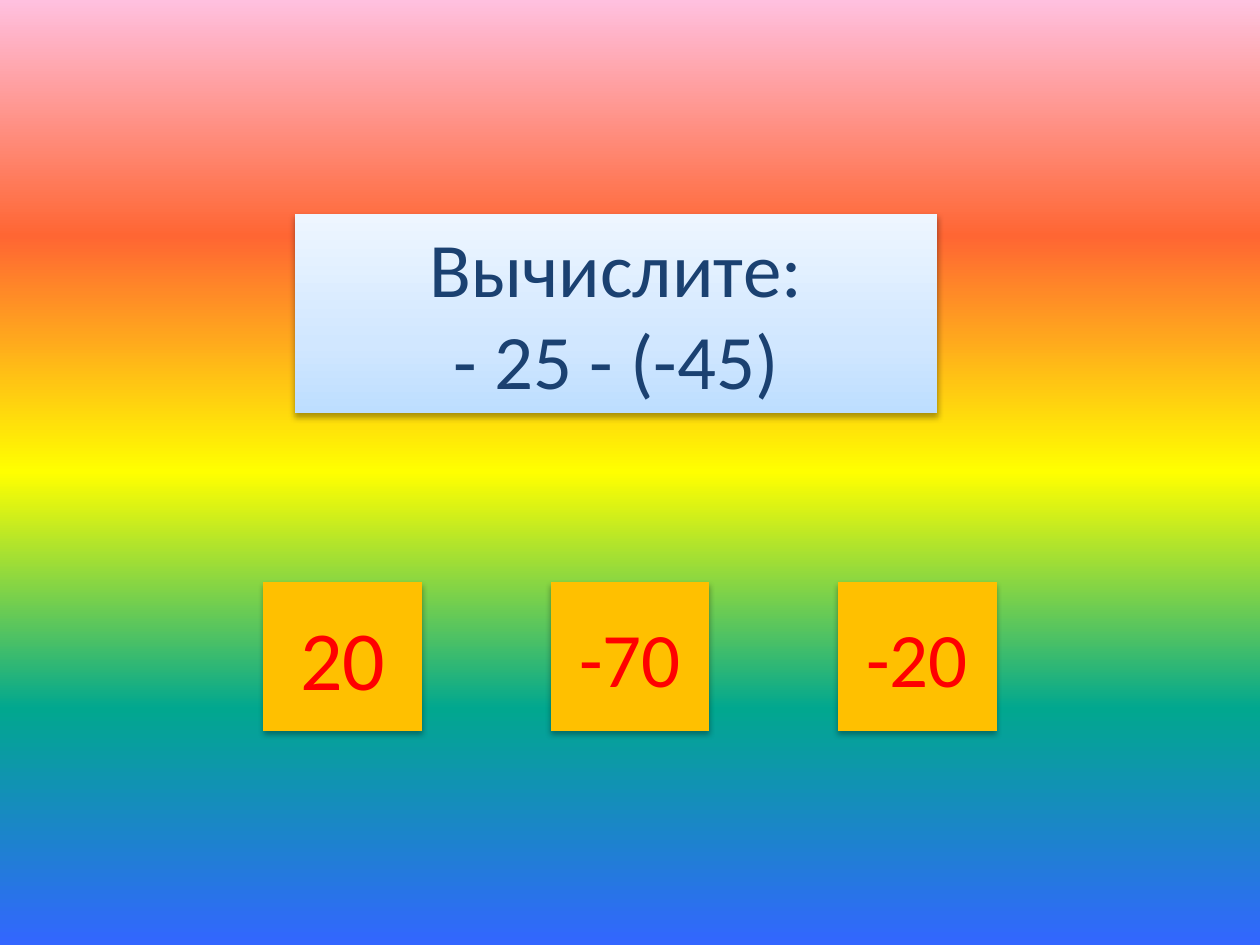
from lxml.etree import SubElement
from pptx import Presentation
from pptx.dml.color import RGBColor
from pptx.enum.shapes import MSO_SHAPE
from pptx.enum.text import MSO_ANCHOR, PP_ALIGN
from pptx.oxml.ns import qn
from pptx.util import Inches, Pt

NAVY = RGBColor(0x1B, 0x41, 0x71)
RED = RGBColor(0xFF, 0x00, 0x00)
AMBER = RGBColor(0xFF, 0xC0, 0x00)
BLACK = RGBColor(0x00, 0x00, 0x00)
RAINBOW = [
    (0, RGBColor(0xFF, 0xC0, 0xDF)),
    (25, RGBColor(0xFF, 0x66, 0x33)),
    (50, RGBColor(0xFF, 0xFF, 0x00)),
    (75, RGBColor(0x01, 0xA7, 0x8F)),
    (100, RGBColor(0x33, 0x66, 0xFF)),
]
PALE_BLUES = [
    (0, RGBColor(0xBD, 0xDE, 0xFF)),
    (35, RGBColor(0xD1, 0xE7, 0xFF)),
    (100, RGBColor(0xEE, 0xF6, 0xFF)),
]


def apply_gradient(owner, fill, stops, angle):
    """Fill with any number of stops; the angle runs counter-clockwise."""
    fill.gradient()
    fill.gradient_angle = angle
    stop_list = owner.find(".//" + qn("a:gsLst"))
    stop_list.clear()
    for percent, color in stops:
        stop = SubElement(stop_list, qn("a:gs"), pos=str(percent * 1000))
        SubElement(stop, qn("a:srgbClr"), val=str(color))


def add_card(preset, left, top, width, height, lines, anchor, font_format):
    """Add a borderless card with centred text and a soft shadow below."""
    card = slide.shapes.add_shape(
        preset, Inches(left), Inches(top), Inches(width), Inches(height))
    card.line.fill.background()
    card.shadow.inherit = False
    effects = card.element.spPr.find(qn("a:effectLst"))
    shadow = SubElement(
        effects, qn("a:outerShdw"), blurRad=str(Pt(3.5)), dist=str(Pt(2.2)),
        dir="5400000", rotWithShape="0")
    shade = SubElement(shadow, qn("a:srgbClr"), val=str(BLACK))
    SubElement(shade, qn("a:alpha"), val="32000")

    frame = card.text_frame
    frame.word_wrap = True
    frame.vertical_anchor = anchor
    frame.text = "\n".join(lines)
    for paragraph in frame.paragraphs:
        paragraph.alignment = PP_ALIGN.CENTER
        font = paragraph.runs[0].font
        font.color.rgb = font_format["color"]
        for name in ("name", "size"):
            setattr(font, name, font_format[name])
    return card


presentation = Presentation()
presentation.slide_width = Inches(10)
presentation.slide_height = Inches(7.5)
slide = presentation.slides.add_slide(presentation.slide_layouts[6])

# Rainbow background
apply_gradient(slide.background.fill and slide.element,
               slide.background.fill, RAINBOW, 270)

# Question
question = add_card(
    MSO_SHAPE.RECTANGLE, 2.34, 1.7, 5.1, 1.58,
    ["Вычислите:", "- 25 - (-45)"], MSO_ANCHOR.TOP,
    {"name": "Calibri", "size": Pt(44), "color": NAVY})
apply_gradient(question.element, question.fill, PALE_BLUES, 90)
# A negative indent moves the centred first line to the left
heading = question.text_frame.paragraphs[0]
heading.runs[0].font.bold = False
heading_properties = heading._p.get_or_add_pPr()
heading_properties.set("marL", "0")
heading_properties.set("indent", str(-Inches(0.55)))

# Answer buttons
for column, (answer, size) in enumerate([("20", 48), ("-70", 44), ("-20", 44)]):
    button = add_card(
        MSO_SHAPE.ACTION_BUTTON_CUSTOM, 2.09 + 2.28 * column, 4.62, 1.26, 1.18,
        [answer], MSO_ANCHOR.MIDDLE,
        {"name": "Calibri", "size": Pt(size), "color": RED})
    button.fill.solid()
    button.fill.fore_color.rgb = AMBER

presentation.save("out.pptx")
